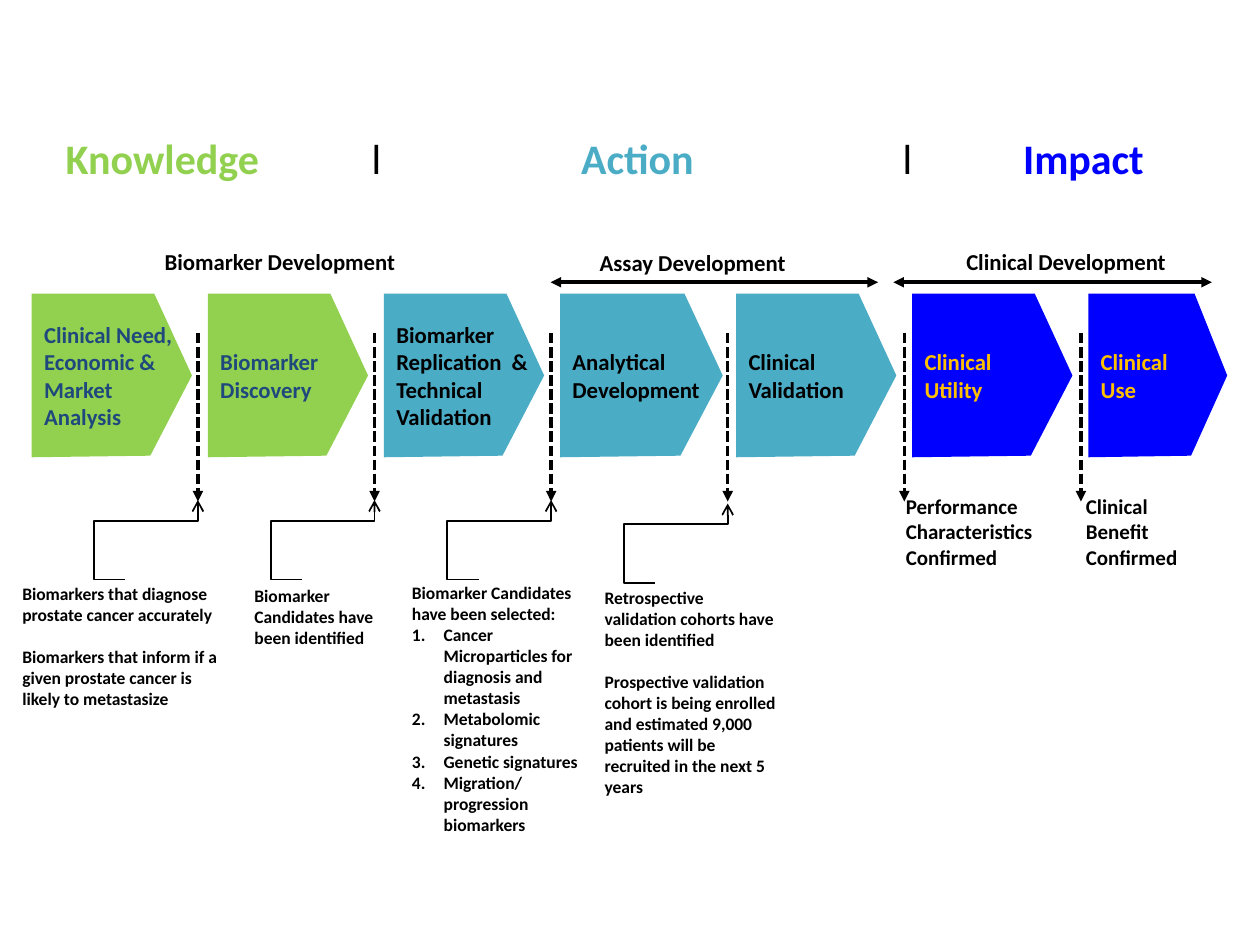
"""Build the biomarker pathway slide, from knowledge through action to impact."""
import pptx
import pptx.dml.color
import pptx.enum.dml
import pptx.enum.shapes
import pptx.enum.text
import pptx.oxml.ns
import pptx.util
import lxml.etree

Cm = pptx.util.Cm
THEME = {
    "font": "Calibri",
    "sizes": {"heading": 24, "stage": 13, "outcome": 12, "note": 10},
    "colours": {"green": "92D050", "teal": "4BACC6", "blue": "0000FF",
                "navy": "1F497D", "gold": "FFC000", "black": "000000"},
}

HEADING_BOX = (1.07, 2.54, 23.37, 1.27)
HEADING = [("Knowledge", "green", True), ("l", "black", False), ("Action", "teal", True),
           ("l", "black", False), ("Impact", "blue", True)]
HEADING_TABS = [6.17, 10.39, 16.87, 19.3]

STAGES = [
    (["Clinical Need, Economic & Market Analysis"], "green", "navy", 3.23),
    (["Biomarker Discovery"], "green", "navy", 3.23),
    (["Biomarker Replication  & Technical Validation"], "teal", "black", 3.23),
    (["Analytical", "Development"], "teal", "black", 3.28),
    (["Clinical Validation"], "teal", "black", 3.23),
    (["Clinical", "Utility"], "blue", "gold", 3.23),
    (["Clinical", "Use"], "blue", "gold", 2.8),
]
STAGE_LEFT, STAGE_PITCH, STAGE_TOP, STAGE_HEIGHT = 0.64, 3.55, 5.92, 3.3
STAGE_OUTLINE = [(0, 0), (0, 1), (0.74, 0.99), (1, 0.5), (0.765, 0)]

GATE_LEFT, GATE_PITCH, GATE_TOP, GATE_BOTTOM = 3.99, 3.56, 6.71, 10.11
ELBOW_DROPS = [0, 0, 0, 0.07]
ELBOW_WIDTH, ELBOW_TOP, ELBOW_BOTTOM = 1.46, 10.08, 11.68
ELBOW_BENDS = {"adj1": -43400, "adj2": 74000}

PHASES = [("Biomarker Development", (3.07, 4.88, 5.21, 0.81)),
          ("Assay Development", (11.84, 4.9, 4.29, 0.81)),
          ("Clinical Development", (19.23, 4.88, 4.6, 0.81))]
PHASE_SPANS, SPAN_TOP = [(11.1, 17.7), (18.01, 24.43)], 5.69

OUTCOMES = [(["Performance", "Characteristics", "Confirmed"], (18.01, 9.83, 3.23, 1.8)),
            (["Clinical", "Benefit", "Confirmed"], (21.64, 9.83, 3.23, 1.8))]
NOTES = [
    (["Biomarkers that diagnose prostate cancer accurately",
      "Biomarkers that inform if a given prostate cancer is likely to metastasize"],
     (0.2, 11.63, 4.47, 2.82)),
    (["Biomarker Candidates have been identified"], (4.88, 11.66, 3.38, 1.55)),
    (["Retrospective validation cohorts have been identified",
      "Prospective validation cohort is being enrolled and estimated 9,000 patients "
      "will be recruited in the next 5 years"], (11.94, 11.71, 4.01, 4.52)),
]
CANDIDATES_BOX = (8.05, 11.61, 4.01, 4.95)
CANDIDATES_INTRO = "Biomarker Candidates have been selected:"
CANDIDATES = ["Cancer Microparticles for diagnosis and metastasis", "Metabolomic signatures",
              "Genetic signatures", "Migration/progression biomarkers"]


def colour(name):
    return pptx.dml.color.RGBColor.from_string(THEME["colours"][name])


def apply(target, formats):
    for name, value in formats.items():
        setattr(target, name, value)


def add_element(parent, tag, **attributes):
    element = lxml.etree.SubElement(parent, pptx.oxml.ns.qn(tag))
    for name, value in attributes.items():
        element.set(name, str(value))
    return element


def add_run(paragraph, words, role, ink="black", bold=True):
    run = paragraph.add_run()
    run.text = words
    apply(run.font, {"name": THEME["font"], "size": pptx.util.Pt(THEME["sizes"][role]),
                     "bold": bold})
    run.font.color.rgb = colour(ink)


def write(frame, lines, role, ink="black", gap=0, wrap=True, anchor="TOP"):
    apply(frame, {"word_wrap": wrap, "auto_size": pptx.enum.text.MSO_AUTO_SIZE.NONE,
                  "vertical_anchor": getattr(pptx.enum.text.MSO_ANCHOR, anchor)})
    for index, line in enumerate(lines):
        paragraph = frame.add_paragraph() if index else frame.paragraphs[0]
        apply(paragraph, {"alignment": pptx.enum.text.PP_ALIGN.LEFT,
                          "space_before": pptx.util.Pt(gap if index else 0)})
        add_run(paragraph, line, role, ink)


def place(placeholder, box):
    apply(placeholder, dict(zip(("left", "top", "width", "height"), map(Cm, box))))


def add_caption(slide, lines, box, role, **options):
    write(slide.shapes.add_textbox(*map(Cm, box)).text_frame, lines, role, **options)


def add_line(slide, ends, width, tail, head=None, dash=None, kind="STRAIGHT"):
    connector = slide.shapes.add_connector(
        getattr(pptx.enum.shapes.MSO_CONNECTOR, kind), *map(Cm, ends))
    connector.line.color.rgb = colour("black")
    apply(connector.line, {"width": pptx.util.Pt(width), "dash_style": dash})
    properties = connector._element.spPr
    outline = properties.find(pptx.oxml.ns.qn("a:ln"))
    if head:
        add_element(outline, "a:headEnd", type=head)
    add_element(outline, "a:tailEnd", type=tail)
    add_element(properties, "a:effectLst")
    return properties


def add_elbow(slide, ends):
    properties = add_line(slide, ends, 1, "arrow", kind="ELBOW")
    frame = properties.find(pptx.oxml.ns.qn("a:xfrm"))
    frame.attrib.clear()
    apply_attributes = {"rot": "10800000", "flipH": "1"}
    for name, value in apply_attributes.items():
        frame.set(name, value)
    geometry = properties.find(pptx.oxml.ns.qn("a:prstGeom"))
    geometry.set("prst", "bentConnector4")
    bends = geometry.find(pptx.oxml.ns.qn("a:avLst"))
    for name, value in ELBOW_BENDS.items():
        add_element(bends, "a:gd", name=name, fmla=f"val {value}")


def add_stage(slide, index, lines, fill, ink, width):
    left = STAGE_LEFT + index * STAGE_PITCH
    corners = [(Cm(left + x * width), Cm(STAGE_TOP + y * STAGE_HEIGHT))
               for x, y in STAGE_OUTLINE]
    builder = slide.shapes.build_freeform(*corners[0])
    builder.add_line_segments(corners[1:], close=True)
    stage = builder.convert_to_shape()
    stage.shadow.inherit = False
    stage.fill.solid()
    stage.fill.fore_color.rgb = colour(fill)
    stage.line.fill.background()
    write(stage.text_frame, lines, "stage", ink, anchor="MIDDLE")


def fill_heading(title):
    place(title, HEADING_BOX)
    write(title.text_frame, [], "heading")
    paragraph = title.text_frame.paragraphs[0]
    paragraph.alignment = pptx.enum.text.PP_ALIGN.LEFT
    tabs = add_element(paragraph._p.get_or_add_pPr(), "a:tabLst")
    for position in HEADING_TABS:
        add_element(tabs, "a:tab", pos=int(Cm(position)), algn="l")
    for index, (words, ink, bold) in enumerate(HEADING):
        add_run(paragraph, "\t" + words if index else words, "heading", ink, bold)


def fill_candidates(body):
    place(body, CANDIDATES_BOX)
    write(body.text_frame, [CANDIDATES_INTRO] + CANDIDATES, "note")
    for index, paragraph in enumerate(body.text_frame.paragraphs):
        properties = paragraph._p.get_or_add_pPr()
        indent = int(Cm(0.64)) if index else 0
        properties.set("marL", str(indent))
        properties.set("indent", str(-indent))
        if index:
            add_element(properties, "a:buFont", typeface="+mj-lt")
            add_element(properties, "a:buAutoNum", type="arabicPeriod")
        else:
            add_element(properties, "a:buNone")


def main():
    deck = pptx.Presentation()
    apply(deck, {"slide_width": Cm(25.4), "slide_height": Cm(19.05)})
    slide = deck.slides.add_slide(deck.slide_layouts[1])
    fill_heading(slide.shapes.title)
    fill_candidates(slide.placeholders[1])
    for index, stage in enumerate(STAGES):
        add_stage(slide, index, *stage)
    gates = [GATE_LEFT + index * GATE_PITCH for index in range(len(STAGES) - 1)]
    for gate in gates:
        add_line(slide, (gate, GATE_TOP, gate, GATE_BOTTOM), 2, "triangle",
                 dash=pptx.enum.dml.MSO_LINE.SQUARE_DOT)
    for gate, drop in zip(gates, ELBOW_DROPS):
        add_elbow(slide, (gate - ELBOW_WIDTH, ELBOW_BOTTOM + drop, gate, ELBOW_TOP + drop))
    for start, end in PHASE_SPANS:
        add_line(slide, (start, SPAN_TOP, end, SPAN_TOP), 2, "triangle", head="triangle")
    for phase, box in PHASES:
        add_caption(slide, [phase], box, "stage", wrap=False)
    for lines, box in OUTCOMES:
        add_caption(slide, lines, box, "outcome")
    for lines, box in NOTES:
        add_caption(slide, lines, box, "note", gap=12)
    deck.save("out.pptx")


if __name__ == "__main__":
    main()
